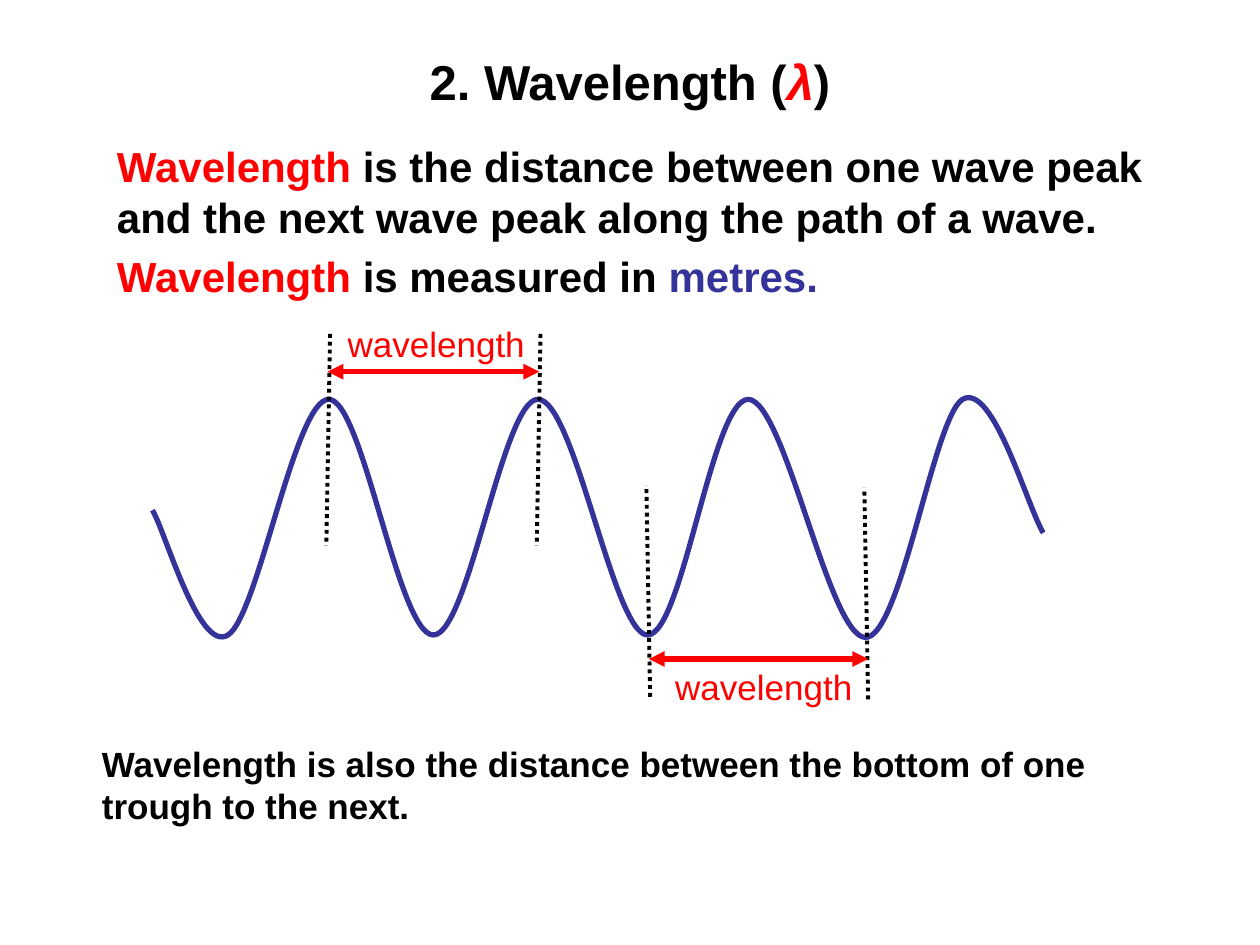
from lxml import etree
from pptx import Presentation
from pptx.dml.color import RGBColor
from pptx.enum.dml import MSO_LINE_DASH_STYLE as DASH
from pptx.enum.shapes import MSO_CONNECTOR
from pptx.enum.text import MSO_ANCHOR, MSO_AUTO_SIZE, PP_ALIGN
from pptx.oxml.ns import qn
from pptx.util import Inches, Pt

BLACK = RGBColor(0x00, 0x00, 0x00)
RED = RGBColor(0xFF, 0x00, 0x00)
BLUE = RGBColor(0x33, 0x33, 0x99)
WAVE_START = (1.21, 4.05)
WAVE_CURVES = [
    [(1.31, 4.21), (1.58, 5.19), (1.81, 5.04)],
    [(2.05, 4.89), (2.34, 3.17), (2.61, 3.17)],
    [(2.88, 3.17), (3.16, 5.04), (3.44, 5.04)],
    [(3.72, 5.04), (3.99, 3.17), (4.27, 3.17)],
    [(4.56, 3.17), (4.87, 5.04), (5.14, 5.04)],
    [(5.42, 5.04), (5.65, 3.17), (5.94, 3.17)],
    [(6.23, 3.18), (6.58, 5.06), (6.87, 5.06)],
    [(7.15, 5.06), (7.41, 3.31), (7.64, 3.17)],
    [(7.88, 3.03), (8.15, 4.01), (8.28, 4.23)],
]


def add_text(shapes, box, paragraphs, size, bold=True, align=PP_ALIGN.LEFT,
             anchor=MSO_ANCHOR.TOP, auto_size=MSO_AUTO_SIZE.NONE):
    shape = shapes.add_textbox(*map(Inches, box))
    text_frame = shape.text_frame
    text_frame.word_wrap = True
    text_frame.auto_size = auto_size
    text_frame.vertical_anchor = anchor
    for index, pieces in enumerate(paragraphs):
        paragraph = text_frame.add_paragraph() if index else text_frame.paragraphs[0]
        paragraph.alignment = align
        if index:
            paragraph.space_before = Pt(size * 0.2)
        for text, color in pieces:
            run = paragraph.add_run()
            run.text = text
            run.font.name = "Arial"
            run.font.size = Pt(size)
            run.font.bold = bold
            run.font.color.rgb = color
    return shape


def add_line(shapes, start, end, color, width):
    connector = shapes.add_connector(
        MSO_CONNECTOR.STRAIGHT, *map(Inches, (*start, *end)))
    connector.line.color.rgb = color
    connector.line.width = Pt(width)
    etree.SubElement(connector._element.spPr, qn("a:effectLst"))
    return connector


def add_title(slide, box):
    pieces = [("2. Wavelength (", BLACK), ("λ", RED), (")", BLACK)]
    shape = add_text(slide.shapes, box, [pieces], 28, align=PP_ALIGN.CENTER,
                     anchor=MSO_ANCHOR.MIDDLE)
    shape.text_frame.paragraphs[0].runs[1].font.italic = True


def add_definition(slide, box):
    add_text(slide.shapes, box, [
        [("Wavelength", RED),
         (" is the distance between one wave peak and the next wave peak"
          " along the path of a wave.", BLACK)],
        [("Wavelength", RED), (" is measured in ", BLACK), ("metres.", BLUE)],
    ], 24)


def add_wave(slide):
    builder = slide.shapes.build_freeform(*map(Inches, WAVE_START))
    builder.add_line_segments(
        [tuple(map(Inches, point)) for curve in WAVE_CURVES for point in curve],
        close=False)
    wave = builder.convert_to_shape()
    segments = list(wave._element.iter(qn("a:lnTo")))
    for first in range(0, len(segments), 3):
        curve = etree.Element(qn("a:cubicBezTo"))
        segments[first].addprevious(curve)
        for segment in segments[first:first + 3]:
            curve.append(segment[0])
            segment.getparent().remove(segment)
    wave.shadow.inherit = False
    wave.fill.background()
    wave.line.color.rgb = BLUE
    wave.line.width = Pt(3)


def add_measure(slide, markers, arrow, label_box):
    shapes = slide.shapes.add_group_shape().shapes
    for start, end in markers:
        marker = add_line(shapes, start, end, BLACK, 2.25)
        marker.line.dash_style = DASH.ROUND_DOT
    left, right, y = arrow
    span = add_line(shapes, (left, y), (right, y), RED, 3)
    line = span.line._get_or_add_ln()
    for tag in ("a:headEnd", "a:tailEnd"):
        etree.SubElement(line, qn(tag), type="triangle")
    add_text(shapes, label_box, [[("wavelength", RED)]], 20, bold=False,
             auto_size=MSO_AUTO_SIZE.SHAPE_TO_FIT_TEXT)


def add_trough_note(slide, box):
    note = "Wavelength is also the distance between the bottom of one trough to the next."
    add_text(slide.shapes, box, [[(note, BLACK)]], 20,
             auto_size=MSO_AUTO_SIZE.SHAPE_TO_FIT_TEXT)


def main():
    presentation = Presentation()
    presentation.slide_width = Inches(10)
    presentation.slide_height = Inches(7.5)
    slide = presentation.slides.add_slide(presentation.slide_layouts[6])
    add_title(slide, (0.5, 0.3, 9, 0.69))
    add_definition(slide, (0.83, 1.07, 8.58, 1.6))
    add_wave(slide)
    add_trough_note(slide, (0.71, 5.84, 8.65, 0.77))
    add_measure(slide, [((x, 2.65), (x - 0.03, 4.33)) for x in (2.62, 4.29)],
                (2.6, 4.28, 2.95), (2.66, 2.51, 1.61, 0.43))
    add_measure(slide, [((x, y), (x - 0.03, y - 1.68))
                        for x, y in ((5.16, 5.53), (6.89, 5.55))],
                (5.15, 6.89, 5.23), (5.26, 5.23, 1.61, 0.43))
    presentation.save("out.pptx")


if __name__ == "__main__":
    main()
